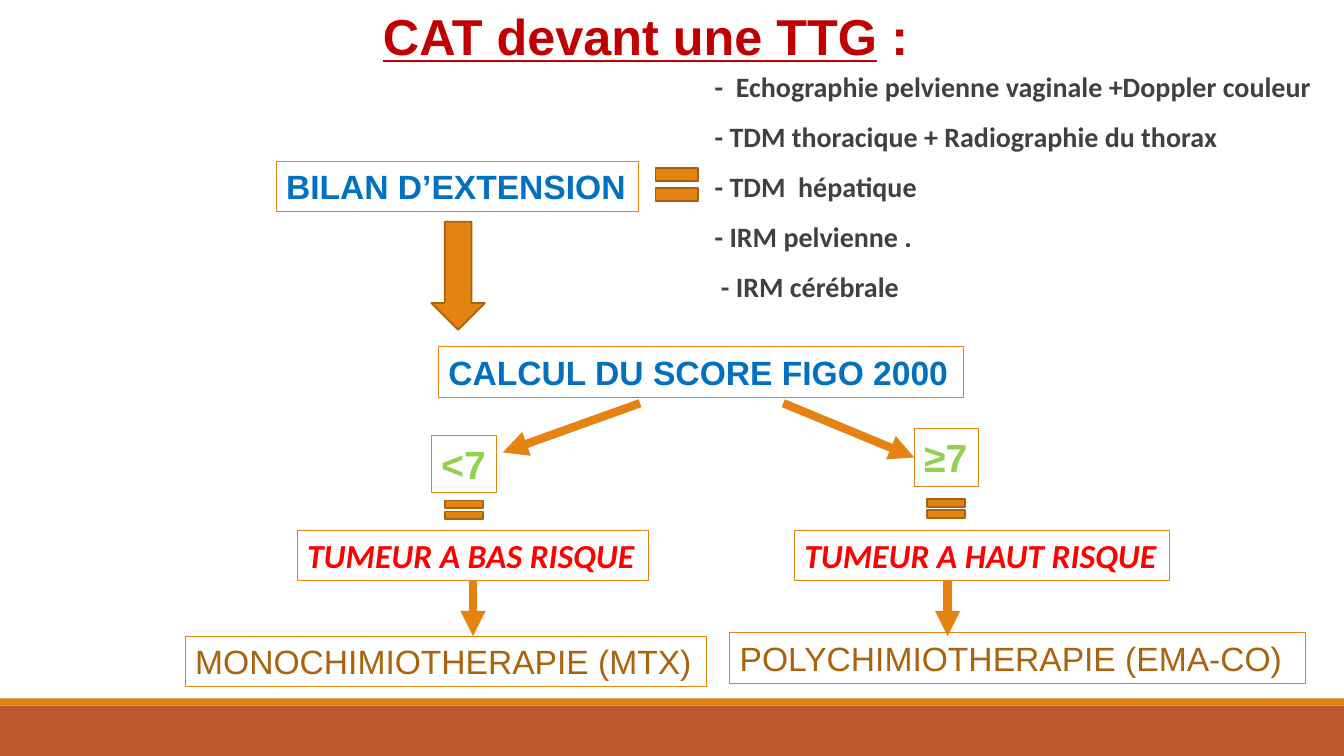
from lxml import etree
from pptx import Presentation
from pptx.dml.color import RGBColor
from pptx.enum.shapes import MSO_CONNECTOR, MSO_SHAPE
from pptx.oxml.ns import qn
from pptx.util import Cm, Pt

STRAIGHT = MSO_CONNECTOR.STRAIGHT
RECTANGLE = MSO_SHAPE.RECTANGLE
DOWN_ARROW = MSO_SHAPE.DOWN_ARROW
EQUAL_SIGN = MSO_SHAPE.MATH_EQUAL
BOTTOM, LEFT = 2, 1
BLANK_LAYOUT = 6
WIDTH, HEIGHT = 33.87, 19.05
BOX_HEIGHT = 1.27

COLORS = {
    "band": "BD582C", "accent": "E48312", "edge": "A9610D",
    "title": "C00000", "step": "0070C0", "score": "92D050",
    "risk": "FF0000", "treatment": "AB620D", "exam": "404040",
}


def color(name):
    return RGBColor.from_string(COLORS[name])


class SlideBuilder:
    def __init__(self, slide):
        self.slide = slide

    def symbol(self, kind, left, top, width, height, fill="accent", edge="edge"):
        shape = self.slide.shapes.add_shape(
            kind, Cm(left), Cm(top), Cm(width), Cm(height))
        shape.shadow.inherit = False
        shape.fill.solid()
        shape.fill.fore_color.rgb = color(fill)
        if edge:
            shape.line.color.rgb = color(edge)
            shape.line.width = Pt(1.25)
        else:
            shape.line.fill.background()
        return shape

    def text_area(self, left, top, width, height):
        shape = self.slide.shapes.add_textbox(
            Cm(left), Cm(top), Cm(width), Cm(height))
        shape.text_frame.word_wrap = True
        return shape

    def run(self, paragraph, text, size, ink, font="Arial",
            bold=True, italic=False, underline=False):
        run = paragraph.add_run()
        run.text = text
        run.font.name = font
        run.font.size = Pt(size)
        run.font.bold = bold
        run.font.italic = italic
        run.font.underline = underline
        run.font.color.rgb = color(ink)

    def box(self, text, left, top, width, height=BOX_HEIGHT, size=24, ink="step", **style):
        """Add a thin outlined box with one line of text."""
        shape = self.text_area(left, top, width, height)
        shape.line.color.rgb = color("accent")
        shape.line.width = Pt(0.75)
        self.run(shape.text_frame.paragraphs[0], text, size, ink, **style)
        return shape

    def title(self, underlined, rest, left, top, width, height):
        shape = self.text_area(left, top, width, height)
        paragraph = shape.text_frame.paragraphs[0]
        paragraph.line_spacing = 0.9
        self.run(paragraph, underlined, 36, "title", underline=True)
        self.run(paragraph, rest, 36, "title")

    def exam_list(self, lines, left, top, width, height):
        frame = self.text_area(left, top, width, height).text_frame
        frame.margin_left = Cm(1.68)
        for index, line in enumerate(lines):
            paragraph = frame.add_paragraph() if index else frame.paragraphs[0]
            paragraph.line_spacing = 0.9
            paragraph.space_before = Pt(12)
            paragraph.space_after = Pt(2)
            self.run(paragraph, line, 20, "exam", font="Calibri")

    def arrow(self, start, end, source=None, target=None):
        """Draw an arrow, joined below source or to the left of target."""
        connector = self.slide.shapes.add_connector(
            STRAIGHT, *(Cm(value) for value in (*start, *end)))
        connector.line.color.rgb = color("accent")
        connector.line.width = Pt(6)
        if source is not None:
            connector.begin_connect(source, BOTTOM)
        if target is not None:
            connector.end_connect(target, LEFT)
        line = connector.line._get_or_add_ln()
        etree.SubElement(line, qn("a:tailEnd"), type="triangle")
        etree.SubElement(connector._element.spPr, qn("a:effectLst"))


def main():
    presentation = Presentation()
    presentation.slide_width = Cm(WIDTH)
    presentation.slide_height = Cm(HEIGHT)
    layout = presentation.slide_layouts[BLANK_LAYOUT]
    builder = SlideBuilder(presentation.slides.add_slide(layout))

    builder.symbol(RECTANGLE, 0, 17.78, WIDTH, 1.27, fill="band", edge=None)
    builder.symbol(RECTANGLE, 0, 17.6, WIDTH, 0.18, edge=None)

    builder.title("CAT devant une TTG", " :", 9.4, 0.18, 18.11, 2.51)
    builder.exam_list([
        "-  Echographie pelvienne vaginale +Doppler couleur",
        "- TDM thoracique + Radiographie du thorax",
        "- TDM  hépatique",
        "- IRM pelvienne .",
        " - IRM cérébrale",
    ], 16.33, 1.73, 17.5, 6.93)

    builder.box("BILAN D’EXTENSION", 6.96, 4.06, 9.14)
    builder.box("CALCUL DU SCORE FIGO 2000", 11.05, 8.74, 13.23)
    builder.symbol(EQUAL_SIGN, 16.33, 3.94, 1.45, 1.42)
    builder.symbol(DOWN_ARROW, 10.87, 5.59, 1.35, 2.72)

    score = {"height": 1.45, "size": 28, "ink": "score"}
    builder.box("<7", 10.87, 10.97, 1.65, **score)
    high_score = builder.box("≥7", 23.04, 10.8, 1.63, **score)
    builder.arrow((16.13, 10.16), (12.67, 11.4))
    builder.arrow((19.74, 10.16), (23.04, 11.4), target=high_score)
    for left, top in ((11.05, 12.45), (23.19, 12.42)):
        builder.symbol(EQUAL_SIGN, left, top, 1.3, 0.79)

    risk = {"ink": "risk", "font": "Calibri", "italic": True}
    low_risk = builder.box("TUMEUR A BAS RISQUE", 7.49, 13.36, 8.86, **risk)
    builder.box("TUMEUR A HAUT RISQUE", 20.02, 13.36, 9.45, **risk)

    treatment = {"ink": "treatment", "bold": False}
    builder.box("MONOCHIMIOTHERAPIE (MTX)", 4.67, 16.03, 13.13, **treatment)
    builder.box("POLYCHIMIOTHERAPIE (EMA-CO)", 18.39, 15.95, 14.5, **treatment)
    builder.arrow((11.92, 14.63), (11.92, 16.03), source=low_risk)
    builder.arrow((23.88, 14.63), (23.88, 16.03))

    presentation.save("out.pptx")


if __name__ == "__main__":
    main()
